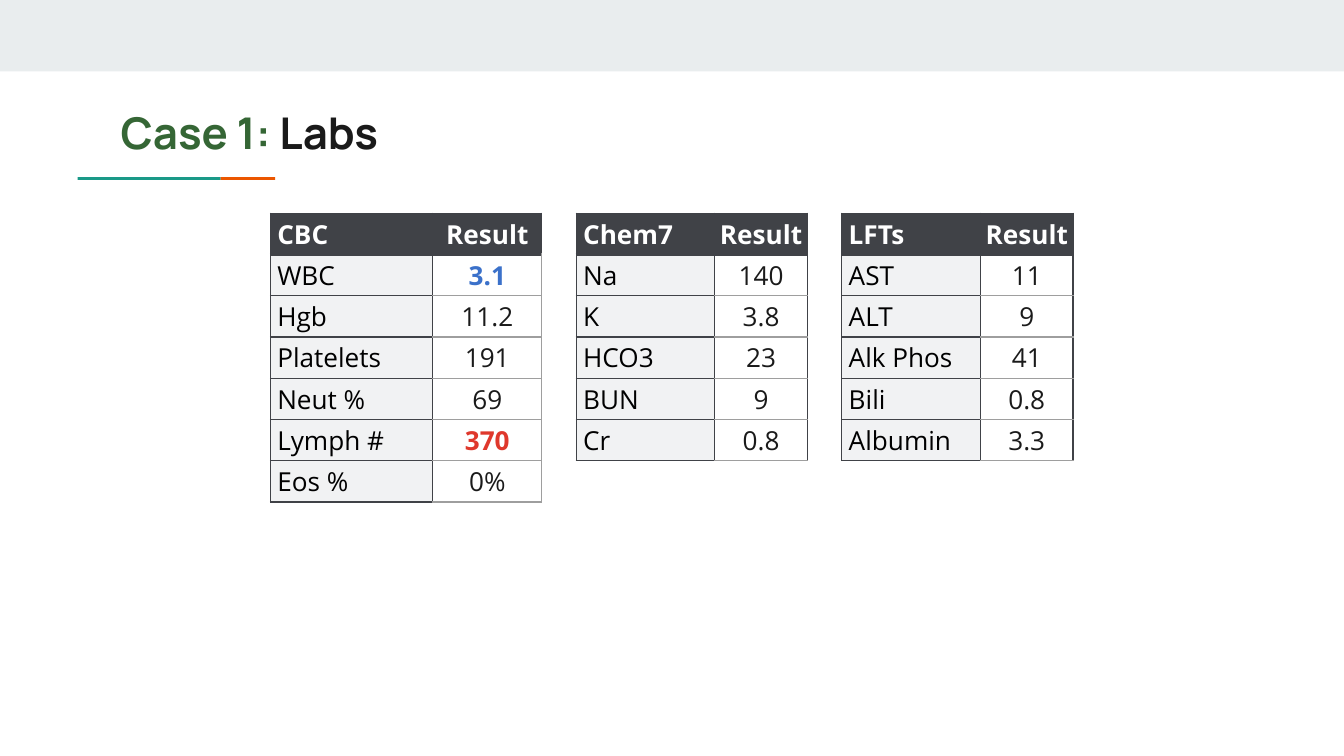
from lxml import etree
from pptx import Presentation
from pptx.dml.color import RGBColor
from pptx.enum.shapes import MSO_SHAPE
from pptx.enum.text import MSO_ANCHOR, PP_ALIGN
from pptx.oxml.ns import qn
from pptx.util import Cm, Pt

RECTANGLE = MSO_SHAPE.RECTANGLE
TOP, MIDDLE = MSO_ANCHOR.TOP, MSO_ANCHOR.MIDDLE
LEFT, CENTER = PP_ALIGN.LEFT, PP_ALIGN.CENTER

DARK, GREY, PALE = "404247", "9E9E9E", "F1F2F3"
WHITE, BLACK, INK = "FFFFFF", "000000", "1A1A1A"
GREEN, BLUE, RED = "356635", "3B71CA", "DF382C"


def color(hex_string):
    return RGBColor.from_string(hex_string)


def add_run(paragraph, text, font_color, **font_values):
    run = paragraph.add_run()
    run.text = text
    run.font.color.rgb = color(font_color)
    for name, value in font_values.items():
        setattr(run.font, name, value)


presentation = Presentation()
presentation.slide_width, presentation.slide_height = Cm(25.4), Cm(14.29)
slide = presentation.slides.add_slide(presentation.slide_layouts[6])

# Top band and two-colour rule under the title
bars = [
    (0, 0, 25.4, 1.35, "E9EDEE"),
    (1.47, 3.35, 2.7, 0.05, "1A9988"),
    (4.17, 3.35, 1.03, 0.05, "EB5600"),
]
for left, top, width, height, fill_color in bars:
    bar = slide.shapes.add_shape(RECTANGLE, Cm(left), Cm(top), Cm(width), Cm(height))
    bar.shadow.inherit = False
    bar.fill.solid()
    bar.fill.fore_color.rgb = color(fill_color)
    bar.line.fill.background()

# Title
title = slide.shapes.add_textbox(Cm(2.03), Cm(1.75), Cm(21.36), Cm(1.5))
title_format = {
    "word_wrap": True,
    "vertical_anchor": TOP,
    "margin_left": Cm(0.25),
    "margin_right": Cm(0.25),
    "margin_top": Cm(0.25),
    "margin_bottom": Cm(0.25),
}
for name, value in title_format.items():
    setattr(title.text_frame, name, value)
for text, font_color in [("Case 1:", GREEN), (" Labs", INK)]:
    add_run(title.text_frame.paragraphs[0], text, font_color,
            name="Manrope", size=Pt(23.4), bold=True)

# Lab panels: column widths, outer border of the results, rows
panels = [
    ((3.07, 2.06), GREY, [
        ("CBC", "Result"), ("WBC", "3.1"), ("Hgb", "11.2"), ("Platelets", "191"),
        ("Neut %", "69"), ("Lymph #", "370"), ("Eos %", "0%"),
    ]),
    ((2.62, 1.75), DARK, [
        ("Chem7", "Result"), ("Na", "140"), ("K", "3.8"), ("HCO3", "23"),
        ("BUN", "9"), ("Cr", "0.8"),
    ]),
    ((2.62, 1.75), DARK, [
        ("LFTs", "Result"), ("AST", "11"), ("ALT", "9"), ("Alk Phos", "41"),
        ("Bili", "0.8"), ("Albumin", "3.3"),
    ]),
]
abnormal_colors = {"3.1": BLUE, "370": RED}
panel_left, panel_top, panel_gap, row_height = 5.11, 4.03, 0.65, 0.78

for widths, outer_color, rows in panels:
    table = slide.shapes.add_table(
        len(rows), 2, Cm(panel_left), Cm(panel_top),
        Cm(sum(widths)), Cm(row_height * len(rows))).table
    for column, width in zip(table.columns, widths):
        column.width = Cm(width)
    panel_left += sum(widths) + panel_gap

    for row_index, row in enumerate(rows):
        table.rows[row_index].height = Cm(row_height)
        is_header = row_index == 0
        for column_index, text in enumerate(row):
            is_label = column_index == 0
            cell = table.cell(row_index, column_index)
            cell_format = {
                "vertical_anchor": MIDDLE,
                "margin_left": Cm(0.13 if is_label else 0),
                "margin_right": 0,
                "margin_top": 0,
                "margin_bottom": 0,
            }
            for name, value in cell_format.items():
                setattr(cell, name, value)

            # Fill and text
            if is_header or is_label:
                cell.fill.solid()
                cell.fill.fore_color.rgb = color(DARK if is_header else PALE)
            else:
                cell.fill.background()
            if is_header:
                font_color = WHITE
            else:
                font_color = BLACK if is_label else abnormal_colors.get(text, INK)
            paragraph = cell.text_frame.paragraphs[0]
            paragraph.alignment = LEFT if is_label else CENTER
            add_run(paragraph, text, font_color, name="Open Sans", size=Pt(14),
                    bold=is_header or text in abnormal_colors)

            # Borders: heavier line below the header, lighter ones around results
            inner_color = DARK if is_header or is_label else GREY
            borders = {
                "a:lnL": (DARK, 0.75),
                "a:lnR": (DARK if is_header or is_label else outer_color, 0.75),
                "a:lnT": (DARK if row_index < 2 else inner_color,
                          1.5 if row_index == 1 else 0.75),
                "a:lnB": (inner_color, 1.5 if is_header else 0.75),
            }
            properties = cell._tc.get_or_add_tcPr()
            for position, (tag, (line_color, points)) in enumerate(borders.items()):
                line = etree.Element(qn(tag), w=str(Pt(points)))
                line_fill = etree.SubElement(line, qn("a:solidFill"))
                etree.SubElement(line_fill, qn("a:srgbClr"), val=line_color)
                properties.insert(position, line)

presentation.save("out.pptx")
